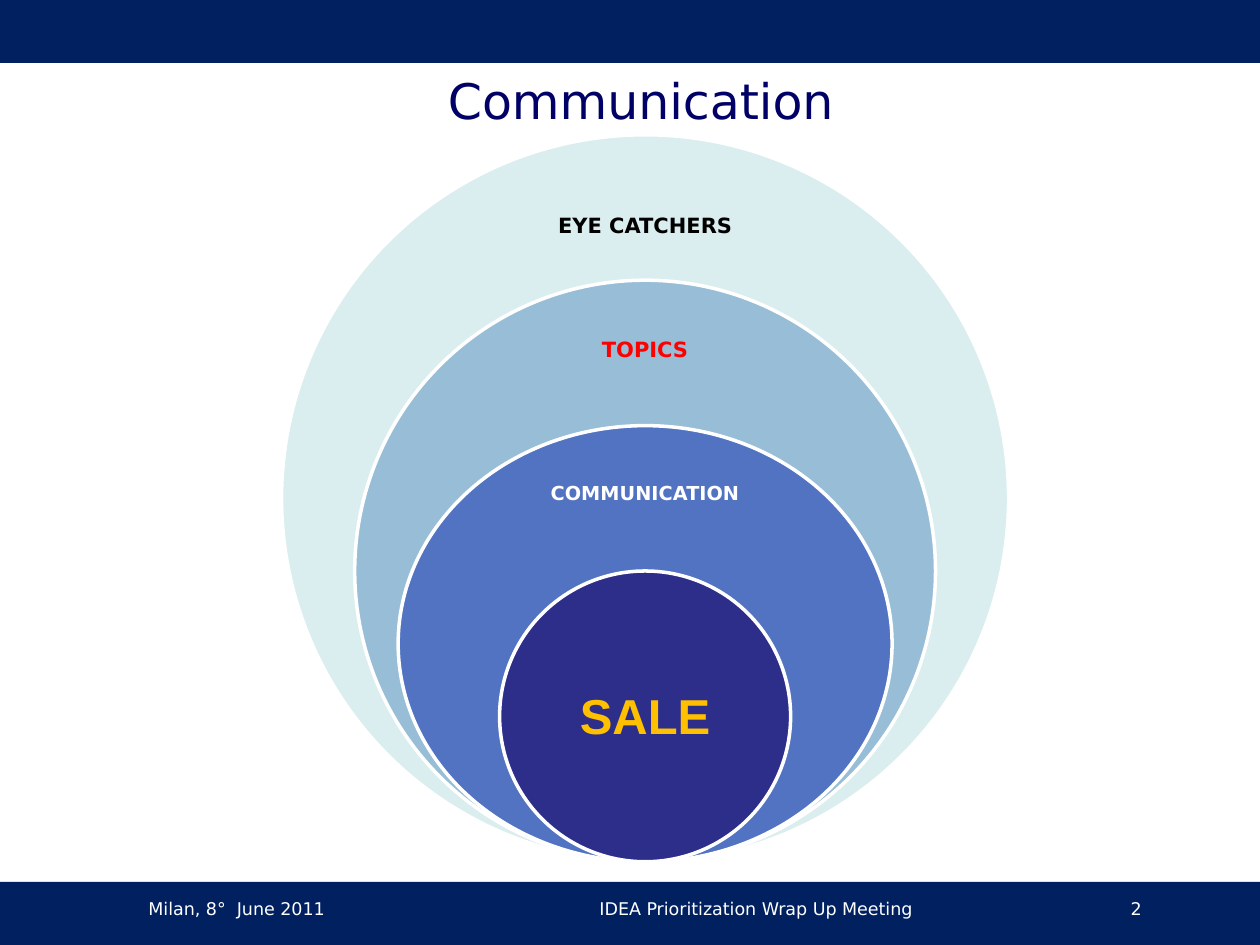
"""Build a slide of nested rings that lead from eye catchers to a sale."""
import pptx
import pptx.util
from pptx.dml.color import RGBColor
from pptx.enum.shapes import MSO_SHAPE
from pptx.enum.text import MSO_ANCHOR, PP_ALIGN

Inches, Pt = pptx.util.Inches, pptx.util.Pt

HUES = {
    "navy": "002060", "title": "000066", "white": "FFFFFF", "black": "000000",
    "red": "FF0000", "gold": "FFC000", "mint": "DAEDEF", "sky": "98BDD6",
    "blue": "5273C1", "indigo": "2D2D8A",
}
WIDE, HIGH, BAR = 10, 7.5, 0.5
MID, TOP, BASE = 5.12, 1.07, 6.84
STEP = (BASE - TOP) / 5
SANS = "DejaVu Sans"
LEFT, CENTER, RIGHT = PP_ALIGN.LEFT, PP_ALIGN.CENTER, PP_ALIGN.RIGHT

RINGS = [("mint", 5.77), ("sky", 4.61), ("blue", 3.92), ("indigo", 2.31)]
LABELS = [
    ("EYE CATCHERS", (1.35, 1.61, 0.87), 0.09, 0.09, 12, SANS, "black"),
    ("TOPICS", (2.5, 1.61, 0.83), 0.09, 0.38, 12, SANS, "red"),
    ("COMMUNICATION", (3.63, 1.83, 0.78), 0.09, 0.31, 11, SANS, "white"),
    ("SALE", (5.1, 1.63, 1.15), 0.22, 0.22, 28, "Arial", "gold"),
]
FOOTER = [
    ("Milan, 8°  June 2011", 1.08, 2.33, LEFT),
    ("IDEA Prioritization Wrap Up Meeting", 3.5, 5, CENTER),
    ("2", 8.58, 0.58, RIGHT),
]


def hue(name):
    return RGBColor.from_string(HUES[name])


def apply(item, values):
    for key, value in values.items():
        setattr(item, key, value)


def draw(slide, kind, box, fill, edge=None):
    shape = slide.shapes.add_shape(kind, *map(Inches, box))
    shape.shadow.inherit = False
    shape.fill.solid()
    shape.fill.fore_color.rgb = hue(fill)
    if edge:
        shape.line.color.rgb = hue(edge)
        shape.line.width = Pt(2)
    else:
        shape.line.fill.background()


def write(slide, text, box, size, color, align=CENTER, face=SANS, bold=False, **frame):
    body = slide.shapes.add_textbox(*map(Inches, box)).text_frame
    apply(body, {"word_wrap": True, **frame})
    para = body.paragraphs[0]
    para.alignment = align
    run = para.add_run()
    run.text = text
    apply(run.font, {"size": Pt(size), "name": face, "bold": bold})
    run.font.color.rgb = hue(color)


def main():
    deck = pptx.Presentation()
    apply(deck, {"slide_width": Inches(WIDE), "slide_height": Inches(HIGH)})
    slide = deck.slides.add_slide(deck.slide_layouts[6])
    for top in (HIGH - BAR, 0):
        draw(slide, MSO_SHAPE.RECTANGLE, (0, top, WIDE, BAR), "navy")
    write(slide, "Communication", (0.5, BAR, 9.17, 0.58), 28, "title",
          vertical_anchor=MSO_ANCHOR.MIDDLE)
    for text, left, width, align in FOOTER:
        write(slide, text, (left, 7.08, width, 0.42), 10, "white", align)
    for row, (ring, label) in enumerate(zip(RINGS, LABELS)):
        fill, width = ring
        top = TOP + row * STEP
        draw(slide, MSO_SHAPE.OVAL, (MID - width / 2, top, width, BASE - top), fill, "white")
        text, (top, width, height), pad, foot, size, face, color = label
        write(slide, text, (MID - width / 2, top, width, height), size, color,
              face=face, bold=True, vertical_anchor=MSO_ANCHOR.MIDDLE,
              margin_left=Inches(pad), margin_right=Inches(pad),
              margin_top=Inches(pad), margin_bottom=Inches(foot))
    deck.save("out.pptx")


if __name__ == "__main__":
    main()
